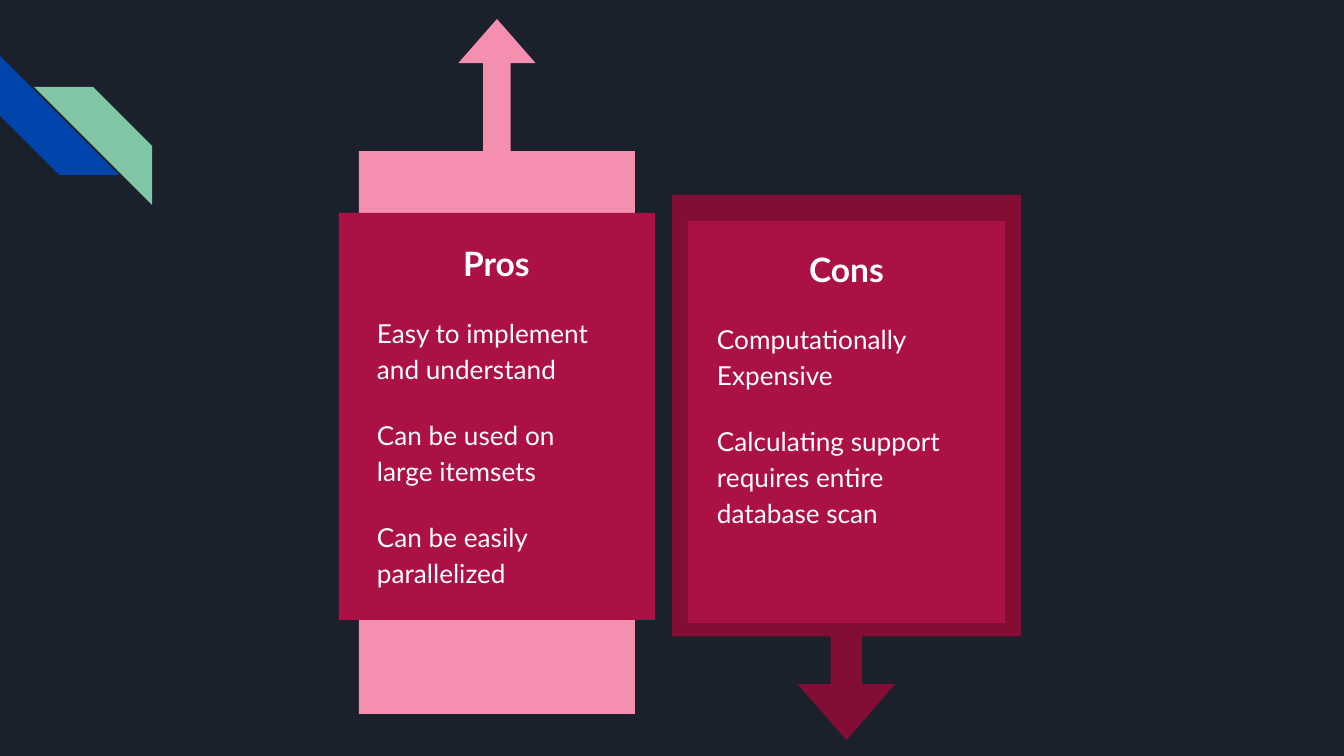
"""Build a slide that sets pros against cons in two arrow callouts."""
import pptx
import pptx.dml.color
import pptx.enum.shapes
import pptx.enum.text
import pptx.util
from dataclasses import dataclass

SHAPE = pptx.enum.shapes.MSO_SHAPE
ALIGN = pptx.enum.text.PP_ALIGN


@dataclass(frozen=True)
class Theme:
    font: str = "Lato"
    background: str = "1B212C"
    blue: str = "0145AC"
    green: str = "82C7A5"
    pink: str = "F48FB0"
    wine: str = "840D35"
    panel: str = "AC1145"
    text: str = "FFFFFF"
    heading_size: int = 18
    body_size: int = 14
    line_spacing: float = 1.15
    gap: int = 16


T = Theme()
SLIDE = (1344, 756)
INSET = 13

STRIPES = [
    ((0, 56, 119, 119), 270, T.blue),
    ((34, 87, 118, 118), 90, T.green),
]

CARDS = [
    {
        "heading": "Pros",
        "points": [
            "Easy to implement and understand",
            "Can be used on large itemsets",
            "Can be easily parallelized",
        ],
        "arrow": SHAPE.UP_ARROW_CALLOUT,
        "arrow_box": (359, 19, 276, 695),
        "adjustments": (0.1, 0.14, 0.16, 0.81),
        "color": T.pink,
        "panel_box": (339, 213, 316, 407),
        "text_box": (364, 224, 265, 380),
    },
    {
        "heading": "Cons",
        "points": [
            "Computationally Expensive",
            "Calculating support requires entire database scan",
        ],
        "arrow": SHAPE.DOWN_ARROW_CALLOUT,
        "arrow_box": (672, 195, 349, 545),
        "adjustments": (0.09, 0.14, 0.16, 0.81),
        "color": T.wine,
        "panel_box": (688, 221, 317, 402),
        "text_box": (704, 230, 285, 372),
    },
]


def px(n):
    return pptx.util.Emu(round(n * 914400 / 134.4))


def rgb(color):
    return pptx.dml.color.RGBColor.from_string(color)


def add_block(s, kind, box, color, adjustments=(), rotation=0):
    sp = s.shapes.add_shape(kind, *map(px, box))
    sp.shadow.inherit = False
    sp.fill.solid()
    sp.fill.fore_color.rgb = rgb(color)
    sp.line.fill.background()
    sp.rotation = rotation
    for i, value in enumerate(adjustments):
        sp.adjustments[i] = value


def add_paragraph(p, text, size, bold, align, space_before):
    p.alignment = align
    p.line_spacing = T.line_spacing
    p.space_before = pptx.util.Pt(space_before)
    r = p.add_run()
    r.text = text
    r.font.name = T.font
    r.font.size = pptx.util.Pt(size)
    r.font.bold = bold
    r.font.color.rgb = rgb(T.text)


def add_card(s, card):
    add_block(s, card["arrow"], card["arrow_box"], card["color"], card["adjustments"])
    add_block(s, SHAPE.RECTANGLE, card["panel_box"], T.panel)
    tf = s.shapes.add_textbox(*map(px, card["text_box"])).text_frame
    tf.word_wrap = True
    tf.margin_left = tf.margin_right = tf.margin_top = tf.margin_bottom = px(INSET)
    add_paragraph(tf.paragraphs[0], card["heading"], T.heading_size, True, ALIGN.CENTER, 0)
    for point in card["points"]:
        add_paragraph(tf.add_paragraph(), point, T.body_size, False, ALIGN.LEFT, T.gap)


def main():
    prs = pptx.Presentation()
    prs.slide_width, prs.slide_height = map(px, SLIDE)
    s = prs.slides.add_slide(prs.slide_layouts[6])
    s.background.fill.solid()
    s.background.fill.fore_color.rgb = rgb(T.background)
    for box, rotation, color in STRIPES:
        add_block(s, SHAPE.DIAGONAL_STRIPE, box, color, rotation=rotation)
    for card in CARDS:
        add_card(s, card)
    prs.save("out.pptx")


if __name__ == "__main__":
    main()
